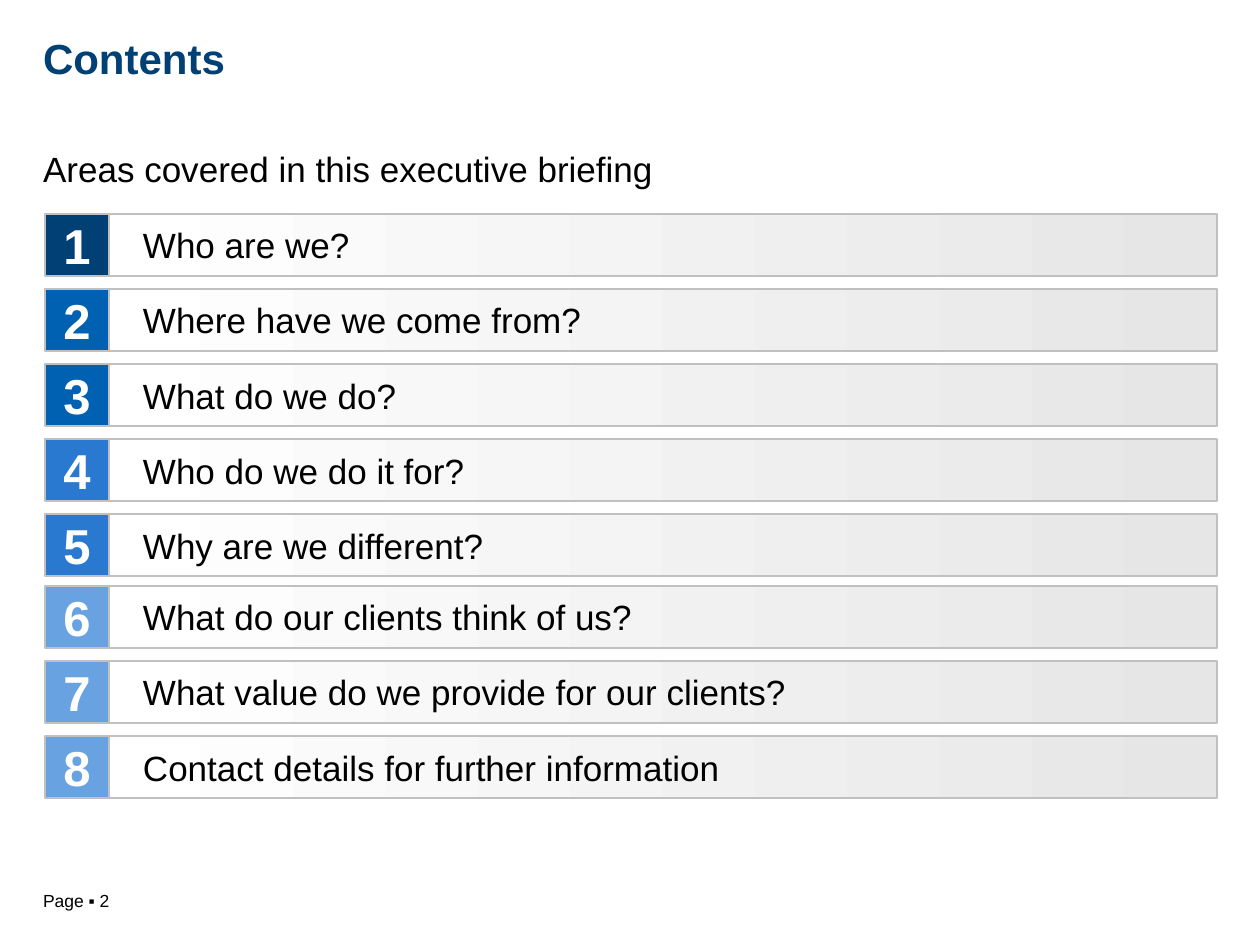
from dataclasses import dataclass

from pptx import Presentation
from pptx.dml.color import RGBColor
from pptx.enum.shapes import MSO_SHAPE as Shape
from pptx.enum.text import MSO_ANCHOR as Anchor, PP_ALIGN as Align
from pptx.util import Pt

EMU_PER_PX = 914400 / 126


@dataclass(frozen=True)
class Theme:
    font: str = "Arial"
    ink: str = "000000"
    white: str = "FFFFFF"
    navy: str = "004074"
    blue: str = "0061B2"
    mid_blue: str = "2A79D0"
    light_blue: str = "69A2E1"
    border: str = "C0C0C0"
    bar_end: str = "E6E6E6"
    title_size: int = 24
    body_size: int = 20
    number_size: int = 28
    footer_size: int = 10


THEME = Theme()
BAR_INSETS = (35, 10, 10, 10)
ROW_PITCH = 75
ROW_HEIGHT = 62

TOPIC_GROUPS = [
    (214, [
        ("Who are we?", THEME.navy),
        ("Where have we come from?", THEME.blue),
        ("What do we do?", THEME.blue),
        ("Who do we do it for?", THEME.mid_blue),
        ("Why are we different?", THEME.mid_blue),
    ]),
    (586, [
        ("What do our clients think of us?", THEME.light_blue),
        ("What value do we provide for our clients?", THEME.light_blue),
        ("Contact details for further information", THEME.light_blue),
    ]),
]


def px(length):
    return round(length * EMU_PER_PX)


def rgb(value):
    return RGBColor.from_string(value)


def write(shape, text, size=THEME.body_size, color=THEME.ink, bold=False,
          align=Align.LEFT, insets=(0, 0, 0, 0), line_spacing=None):
    frame = shape.text_frame
    frame.word_wrap = True
    frame.vertical_anchor = Anchor.MIDDLE
    frame.margin_left, frame.margin_top, frame.margin_right, frame.margin_bottom = map(px, insets)
    paragraph = frame.paragraphs[0]
    paragraph.alignment = align
    paragraph.line_spacing = line_spacing
    run = paragraph.add_run()
    run.text = text
    run.font.name = THEME.font
    run.font.size = Pt(size)
    run.font.bold = bold
    run.font.color.rgb = rgb(color)


def add_label(slide, box, text, **text_format):
    write(slide.shapes.add_textbox(*map(px, box)), text, **text_format)


def add_box(slide, box, colors, text, **text_format):
    panel = slide.shapes.add_shape(Shape.RECTANGLE, *map(px, box))
    panel.shadow.inherit = False
    panel.line.color.rgb = rgb(THEME.border)
    panel.line.width = Pt(1)
    if len(colors) == 1:
        panel.fill.solid()
        panel.fill.fore_color.rgb = rgb(colors[0])
    else:
        panel.fill.gradient()
        panel.fill.gradient_angle = 0
        for position, (stop, color) in enumerate(zip(panel.fill.gradient_stops, colors)):
            stop.position = position
            stop.color.rgb = rgb(color)
    write(panel, text, **text_format)


def add_topic(slide, top, number, topic, color):
    add_box(slide, (108, top, 1109, ROW_HEIGHT), [THEME.white, THEME.bar_end],
            topic, insets=BAR_INSETS)
    add_box(slide, (45, top, 64, ROW_HEIGHT), [color], str(number),
            size=THEME.number_size, color=THEME.white, bold=True, align=Align.CENTER)


def main():
    deck = Presentation()
    deck.slide_width, deck.slide_height = px(1260), px(945)
    slide = deck.slides.add_slide(deck.slide_layouts[6])

    add_label(slide, (30, 883, 185, 34), "Page ▪ 2",
              size=THEME.footer_size, insets=(13, 6, 13, 6))
    add_label(slide, (43, 19, 861, 83), "Contents", size=THEME.title_size,
              color=THEME.navy, bold=True, insets=(0, 6, 0, 6), line_spacing=0.95)
    add_label(slide, (43, 144, 1155, 49), "Areas covered in this executive briefing")

    number = 0
    for group_top, topics in TOPIC_GROUPS:
        for row, (topic, color) in enumerate(topics):
            number += 1
            add_topic(slide, group_top + row * ROW_PITCH, number, topic, color)

    deck.save("out.pptx")


if __name__ == "__main__":
    main()
